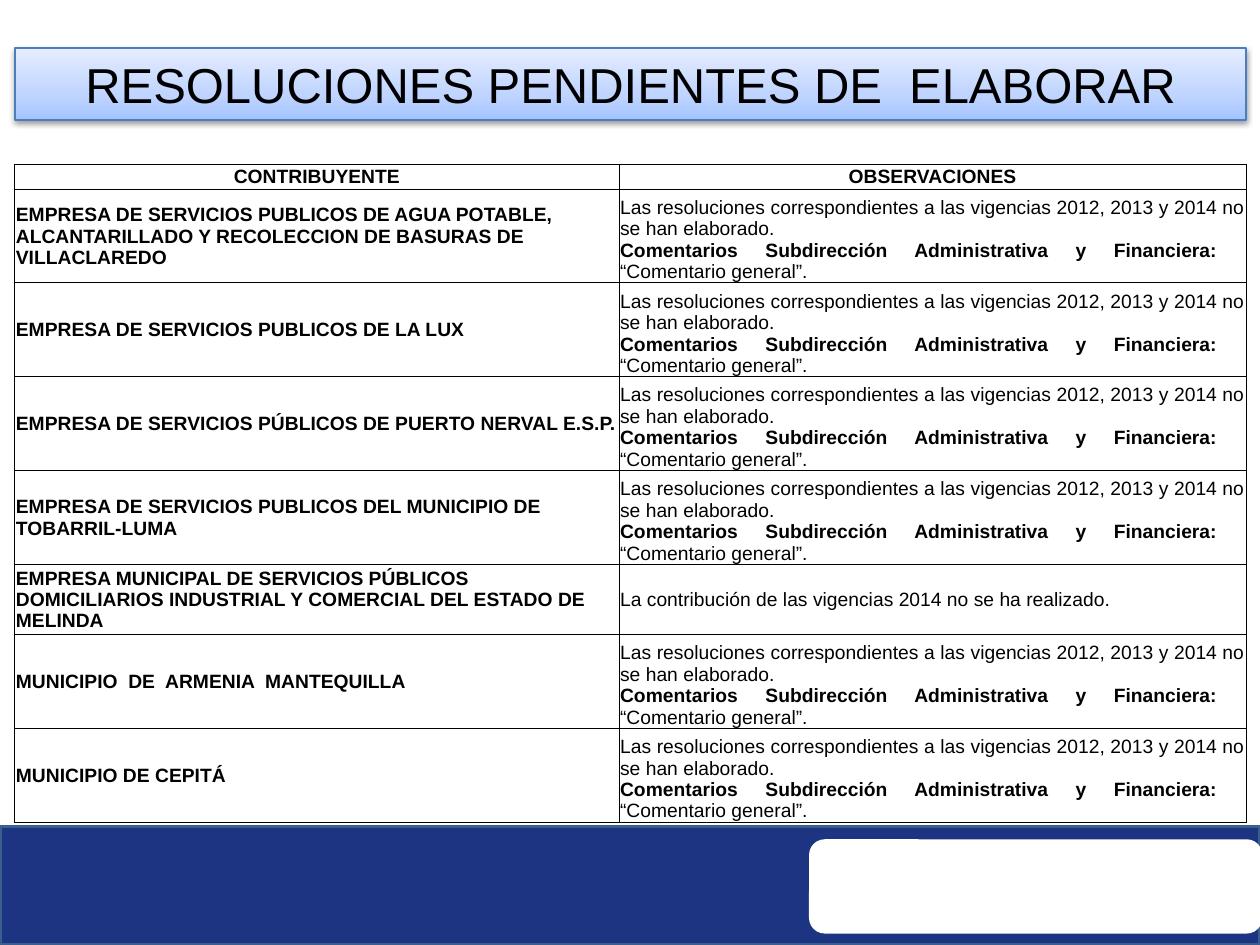
from copy import deepcopy

from lxml import etree
from pptx import Presentation
from pptx.dml.color import RGBColor
from pptx.enum import shapes, text
from pptx.oxml import ns
from pptx.util import Cm, Pt

BLACK = RGBColor(0x00, 0x00, 0x00)
WHITE = RGBColor(0xFF, 0xFF, 0xFF)
NAVY = RGBColor(0x1C, 0x34, 0x81)
BAND_LINE = RGBColor(0x3A, 0x5F, 0x8C)
TITLE_LINE = RGBColor(0x4B, 0x7E, 0xBC)
TITLE_STOPS = [
    (0, RGBColor(0xA4, 0xC4, 0xFF)),
    (0.35, RGBColor(0xBF, 0xD4, 0xFF)),
    (1, RGBColor(0xE6, 0xEE, 0xFF)),
]
FONT = "Arial"
LEFT, WIDTH = Cm(0.3), Cm(24.82)
HEADER_HEIGHT, ROW_HEIGHT, SHORT_ROW_HEIGHT = Cm(0.5), Cm(1.89), Cm(1.42)
NAME_WIDTH = Cm(12.18)

PENDING = [
    [("Las resoluciones correspondientes a las vigencias 2012, 2013 y 2014 no se han elaborado.", False)],
    [("Comentarios Subdirección Administrativa y Financiera:  ", True),
     ("“Comentario general”.", False)],
]
NOT_MADE = [[("La contribución de las vigencias 2014 no se ha realizado. ", False)]]
CONTRIBUTORS = [
    ("EMPRESA DE SERVICIOS PUBLICOS DE AGUA POTABLE, ALCANTARILLADO Y RECOLECCION DE BASURAS DE VILLACLAREDO", PENDING),
    ("EMPRESA DE SERVICIOS PUBLICOS DE LA LUX", PENDING),
    ("EMPRESA DE SERVICIOS PÚBLICOS DE PUERTO NERVAL E.S.P.", PENDING),
    ("EMPRESA DE SERVICIOS PUBLICOS DEL MUNICIPIO DE TOBARRIL-LUMA", PENDING),
    ("EMPRESA MUNICIPAL DE SERVICIOS PÚBLICOS DOMICILIARIOS INDUSTRIAL Y COMERCIAL DEL ESTADO DE MELINDA", NOT_MADE),
    ("MUNICIPIO  DE  ARMENIA  MANTEQUILLA", PENDING),
    ("MUNICIPIO DE CEPITÁ", PENDING),
]


def add_run(paragraph, wording, size, bold=False):
    run = paragraph.add_run()
    run.text = wording
    run.font.name = FONT
    run.font.size = Pt(size)
    run.font.bold = bold
    run.font.color.rgb = BLACK


def add_panel(slide, kind, left, top, width, height, color):
    shape = slide.shapes.add_shape(kind, left, top, width, height)
    shape.shadow.inherit = False
    shape.fill.solid()
    shape.fill.fore_color.rgb = color
    shape.line.fill.background()
    return shape


def add_footer(slide):
    kinds = shapes.MSO_SHAPE
    band = add_panel(slide, kinds.RECTANGLE, 0, Cm(16.66), Cm(25.4), Cm(2.39), NAVY)
    band.line.color.rgb = BAND_LINE
    band.line.width = Pt(2)
    add_panel(slide, kinds.ROUNDED_RECTANGLE, Cm(16.31), Cm(16.92), Cm(9.14), Cm(1.9), WHITE)


def fill_gradient(shape, stops, angle):
    shape.fill.gradient()
    shape.fill.gradient_angle = angle
    stop_list = shape.element.spPr.find(".//" + ns.qn("a:gsLst"))
    stop_list.append(deepcopy(stop_list[-1]))
    for stop, (position, color) in zip(shape.fill.gradient_stops, stops):
        stop.position = position
        stop.color.rgb = color


def add_shadow(shape):
    shape.shadow.inherit = False
    effects = shape.element.spPr.find(ns.qn("a:effectLst"))
    shadow = etree.SubElement(
        effects, ns.qn("a:outerShdw"), blurRad=str(Pt(3.1)), dist=str(Pt(1.6)),
        dir="5400000", rotWithShape="0")
    color = etree.SubElement(shadow, ns.qn("a:srgbClr"), val=str(BLACK))
    etree.SubElement(color, ns.qn("a:alpha"), val="38000")


def format_title(slide):
    title = slide.shapes.title
    title.left, title.top, title.width, title.height = LEFT, Cm(0.97), WIDTH, Cm(1.45)
    fill_gradient(title, TITLE_STOPS, 90)
    title.line.color.rgb = TITLE_LINE
    title.line.width = Pt(0.75)
    add_shadow(title)
    frame = title.text_frame
    frame.word_wrap = True
    frame.auto_size = text.MSO_AUTO_SIZE.NONE
    frame.vertical_anchor = text.MSO_ANCHOR.MIDDLE
    frame.paragraphs[0].alignment = text.PP_ALIGN.CENTER
    add_run(frame.paragraphs[0], "RESOLUCIONES PENDIENTES DE  ELABORAR", 28)


def add_borders(cell):
    properties = cell._tc.get_or_add_tcPr()
    for index, side in enumerate(("lnL", "lnR", "lnT", "lnB")):
        line = etree.Element(ns.qn("a:" + side), w=str(Pt(0.5)))
        fill = etree.SubElement(line, ns.qn("a:solidFill"))
        etree.SubElement(fill, ns.qn("a:srgbClr"), val=str(BLACK))
        properties.insert(index, line)


def fill_cell(cell, paragraphs, alignment, anchor=text.MSO_ANCHOR.MIDDLE):
    cell.margin_left = cell.margin_right = cell.margin_top = Cm(0.02)
    cell.margin_bottom = 0
    cell.vertical_anchor = anchor
    cell.fill.background()
    add_borders(cell)
    frame = cell.text_frame
    for index, runs in enumerate(paragraphs):
        paragraph = frame.add_paragraph() if index else frame.paragraphs[0]
        paragraph.alignment = alignment
        for wording, bold in runs:
            add_run(paragraph, wording, 11, bold)


def add_contributor_table(slide):
    heights = [HEADER_HEIGHT] + [
        ROW_HEIGHT if notes is PENDING else SHORT_ROW_HEIGHT for _, notes in CONTRIBUTORS]
    table = slide.shapes.add_table(
        len(heights), 2, LEFT, Cm(3.31), WIDTH, sum(heights)).table
    table.first_row = table.horz_banding = False
    table.columns[0].width = NAME_WIDTH
    table.columns[1].width = WIDTH - NAME_WIDTH
    for row, height in zip(table.rows, heights):
        row.height = height
    align = text.PP_ALIGN
    for column, heading in enumerate(("CONTRIBUYENTE", "OBSERVACIONES")):
        fill_cell(table.cell(0, column), [[(heading, True)]], align.CENTER)
    for row, (name, notes) in enumerate(CONTRIBUTORS, 1):
        anchor = text.MSO_ANCHOR.BOTTOM if notes is PENDING else text.MSO_ANCHOR.MIDDLE
        fill_cell(table.cell(row, 0), [[(name, True)]], align.LEFT)
        fill_cell(table.cell(row, 1), notes, align.JUSTIFY, anchor)


def main():
    presentation = Presentation()
    presentation.slide_width, presentation.slide_height = Cm(25.4), Cm(19.05)
    slide = presentation.slides.add_slide(presentation.slide_layouts[5])
    add_footer(slide)
    format_title(slide)
    add_contributor_table(slide)
    presentation.save("out.pptx")


if __name__ == "__main__":
    main()
